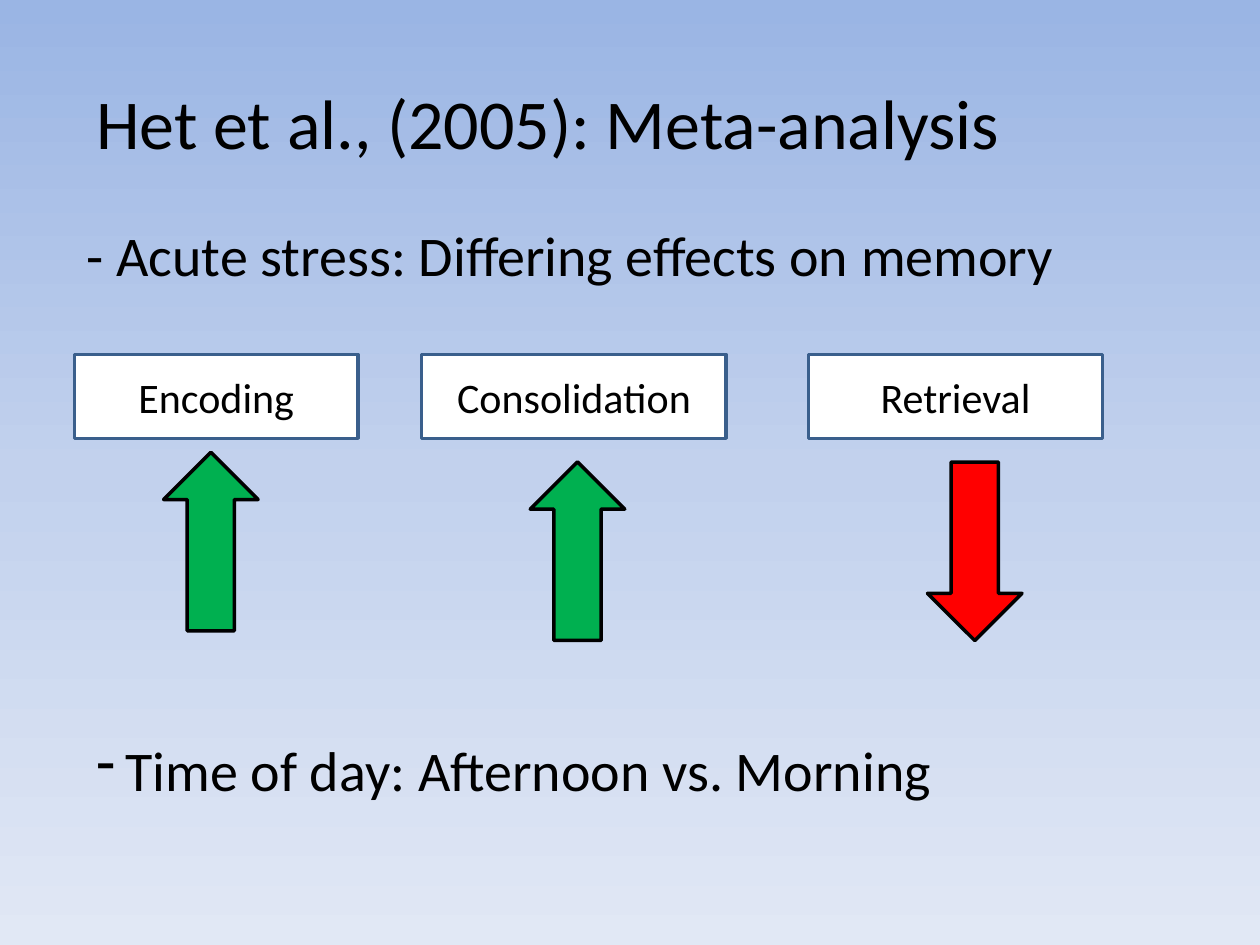
"""Build the slide on how acute stress affects the stages of memory."""
from copy import deepcopy

from lxml.etree import SubElement
from pptx import Presentation
from pptx.dml.color import RGBColor
from pptx.enum.shapes import MSO_SHAPE
from pptx.enum.text import MSO_ANCHOR, MSO_AUTO_SIZE, PP_ALIGN
from pptx.oxml.ns import qn
from pptx.util import Pt

BLACK = RGBColor(0x00, 0x00, 0x00)
WHITE = RGBColor(0xFF, 0xFF, 0xFF)
BLUE = RGBColor(0x3A, 0x5F, 0x8C)
GREEN = RGBColor(0x00, 0xB0, 0x50)
RED = RGBColor(0xFF, 0x00, 0x00)
SKY = (
    RGBColor(0x9A, 0xB5, 0xE4),
    RGBColor(0xC2, 0xD1, 0xED),
    RGBColor(0xE1, 0xE8, 0xF5),
)


class MemorySlide:
    """Hold the style and the slide being drawn."""

    font_name = "Calibri"
    line_width = 2
    box_top, box_height = 202.5, 48
    arrow_width, arrow_height = 54, 102

    def __init__(self, presentation):
        """Add a blank slide."""
        self.slide = presentation.slides.add_slide(presentation.slide_layouts[6])

    def background(self, colors):
        """Fill the background with evenly spaced colours from top to bottom."""
        fill = self.slide.background.fill
        fill.gradient()
        fill.gradient_angle = 270
        first_stop = fill.gradient_stops[0]._gs
        for _ in range(len(colors) - len(fill.gradient_stops)):
            first_stop.addnext(deepcopy(first_stop))
        for index, (stop, color) in enumerate(zip(fill.gradient_stops, colors)):
            stop.position = index / (len(colors) - 1)
            stop.color.rgb = color

    def style_text(self, paragraph, text, size):
        """Write a paragraph in the slide's font."""
        paragraph.text = text
        paragraph.font.name = self.font_name
        paragraph.font.size = Pt(size)
        paragraph.font.color.rgb = BLACK

    def text(self, text, left, top, width, height, size, wrap=True):
        """Add a text box and return its paragraph."""
        shape = self.slide.shapes.add_textbox(Pt(left), Pt(top), Pt(width), Pt(height))
        shape.text_frame.word_wrap = wrap
        shape.text_frame.auto_size = MSO_AUTO_SIZE.SHAPE_TO_FIT_TEXT
        paragraph = shape.text_frame.paragraphs[0]
        self.style_text(paragraph, text, size)
        return paragraph

    def bullet(self, text, left, top, width, height, size, indent):
        """Add a text box with one dashed bullet."""
        paragraph = self.text(text, left, top, width, height, size)
        properties = paragraph._p.get_or_add_pPr()
        properties.set("marL", str(Pt(indent)))
        properties.set("indent", str(-Pt(indent)))
        bullet = SubElement(properties, qn("a:buChar"))
        bullet.set("char", "-")
        properties.insert(0, bullet)

    def shape(self, kind, left, top, width, height, fill, line):
        """Add a filled and outlined preset shape."""
        shape = self.slide.shapes.add_shape(kind, Pt(left), Pt(top), Pt(width), Pt(height))
        shape.shadow.inherit = False
        shape.fill.solid()
        shape.fill.fore_color.rgb = fill
        shape.line.color.rgb = line
        shape.line.width = Pt(self.line_width)
        return shape

    def stage(self, text, left, width):
        """Add the box of one memory stage."""
        shape = self.shape(MSO_SHAPE.RECTANGLE, left, self.box_top, width,
                           self.box_height, WHITE, BLUE)
        shape.text_frame.vertical_anchor = MSO_ANCHOR.MIDDLE
        paragraph = shape.text_frame.paragraphs[0]
        paragraph.alignment = PP_ALIGN.CENTER
        self.style_text(paragraph, text, 24)

    def effect(self, left, top, color, rotation):
        """Add the arrow that shows the direction of an effect."""
        shape = self.shape(MSO_SHAPE.UP_ARROW, left, top, self.arrow_width,
                           self.arrow_height, color, BLACK)
        shape.rotation = rotation


def main():
    """Draw the slide and save it."""
    presentation = Presentation()
    presentation.slide_width, presentation.slide_height = Pt(720), Pt(540)
    slide = MemorySlide(presentation)
    slide.background(SKY)
    slide.text("Het et al., (2005): Meta-analysis", 48, 42, 554, 55.5, 40, wrap=False)
    slide.text("- Acute stress: Differing effects on memory", 42.5, 122.5, 642, 45.5, 32)
    stages = (
        ("Encoding", 42.5, 162, 93.5, 258.5, GREEN, 0),
        ("Consolidation", 241, 174, 303, 264, GREEN, 0),
        ("Retrieval", 462, 168, 530, 264, RED, 180),
    )
    for name, left, width, arrow_left, arrow_top, color, rotation in stages:
        slide.stage(name, left, width)
        slide.effect(arrow_left, arrow_top, color, rotation)
    slide.bullet("Time of day: Afternoon vs. Morning", 48, 417, 576, 46, 32, indent=16.5)
    presentation.save("out.pptx")


if __name__ == "__main__":
    main()
